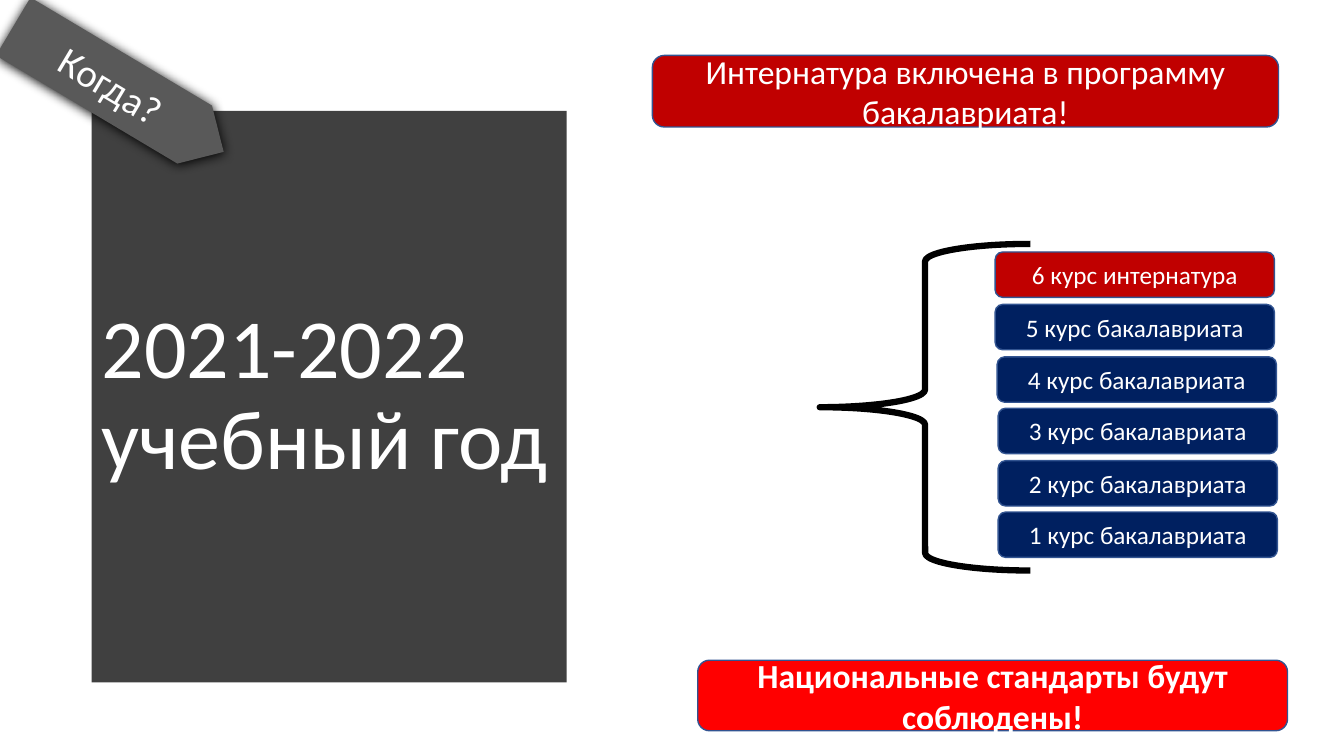
from lxml.etree import SubElement
from pptx import Presentation
from pptx.dml.color import RGBColor
from pptx.enum.shapes import MSO_SHAPE as Shape
from pptx.enum.text import MSO_ANCHOR as Anchor, PP_ALIGN as Align
from pptx.oxml.ns import qn
from pptx.util import Inches, Pt

WHITE = RGBColor(0xFF, 0xFF, 0xFF)
BLACK = RGBColor(0x00, 0x00, 0x00)
CHARCOAL = RGBColor(0x40, 0x40, 0x40)
GRAY = RGBColor(0x59, 0x59, 0x59)
NAVY = RGBColor(0x00, 0x20, 0x60)
CRIMSON = RGBColor(0xC0, 0x00, 0x00)
RED = RGBColor(0xFF, 0x00, 0x00)
OUTLINE = RGBColor(0x32, 0x54, 0x91)


class SlideBuilder:
    """Holds the slide style and draws each kind of element."""

    font = "Calibri"

    def __init__(self, page):
        self.page = page

    def shape(self, kind, place, fill=None, line=None, width=1):
        box = self.page.shapes.add_shape(kind, *map(Inches, place))
        box.shadow.inherit = False
        if fill is None:
            box.fill.background()
        else:
            box.fill.solid()
            box.fill.fore_color.rgb = fill
        if line is None:
            box.line.fill.background()
        else:
            box.line.color.rgb = line
            box.line.width = Pt(width)
        return box

    def set_text(self, box, text, size, bold=False, align=Align.CENTER):
        frame = box.text_frame
        frame.word_wrap = True
        frame.vertical_anchor = Anchor.MIDDLE
        para = frame.paragraphs[0]
        para.text = text
        para.alignment = align
        para.font.name = self.font
        para.font.size = Pt(size)
        para.font.bold = bold
        para.font.color.rgb = WHITE
        return para

    def title(self, place, text):
        box = self.shape(Shape.RECTANGLE, place, CHARCOAL)
        self.set_text(box, text, 60, align=Align.LEFT).line_spacing = 0.9

    def label(self, place, text, fill, size, bold=False):
        box = self.shape(Shape.ROUNDED_RECTANGLE, place, fill, OUTLINE)
        self.set_text(box, text, size, bold)

    def brace(self, place):
        self.shape(Shape.LEFT_BRACE, place, line=BLACK, width=4.5)

    def ribbon(self, place, text, angle):
        box = self.shape(Shape.PENTAGON, place, GRAY)
        box.rotation = angle
        self.set_text(box, text, 28)
        effects = box._element.spPr.find(qn("a:effectLst"))
        shadow = SubElement(effects, qn("a:outerShdw"), blurRad=str(int(Pt(8.5))),
                            dist=str(int(Pt(1))), dir="5400000")
        SubElement(shadow, qn("a:srgbClr"), val=str(BLACK))


def main():
    deck = Presentation()
    deck.slide_width, deck.slide_height = Inches(13.33), Inches(7.5)
    builder = SlideBuilder(deck.slides.add_slide(deck.slide_layouts[6]))

    builder.title((0.91, 1.1, 4.71, 5.67), "2021-2022 учебный год")

    course_lefts = (9.9, 9.9, 9.9, 9.89, 9.87, 9.87)
    for year, left in enumerate(course_lefts, start=1):
        final = year == len(course_lefts)
        stage = "интернатура" if final else "бакалавриата"
        top = round(5.08 - (year - 1) * 0.515, 2)
        builder.label((left, top, 2.77, 0.45), f"{year} курс {stage}",
                      CRIMSON if final else NAVY, 18)

    builder.brace((8.13, 2.42, 2.09, 3.24))
    builder.ribbon((-0.04, 0.55, 2.43, 0.67), "Когда?", 30.8)
    builder.label((6.47, 0.55, 6.21, 0.71),
                  "Интернатура включена в программу бакалавриата!", CRIMSON, 24)
    builder.label((6.92, 6.55, 5.85, 0.7),
                  "Национальные стандарты будут соблюдены!", RED, 24, bold=True)

    deck.save("out.pptx")


if __name__ == "__main__":
    main()
